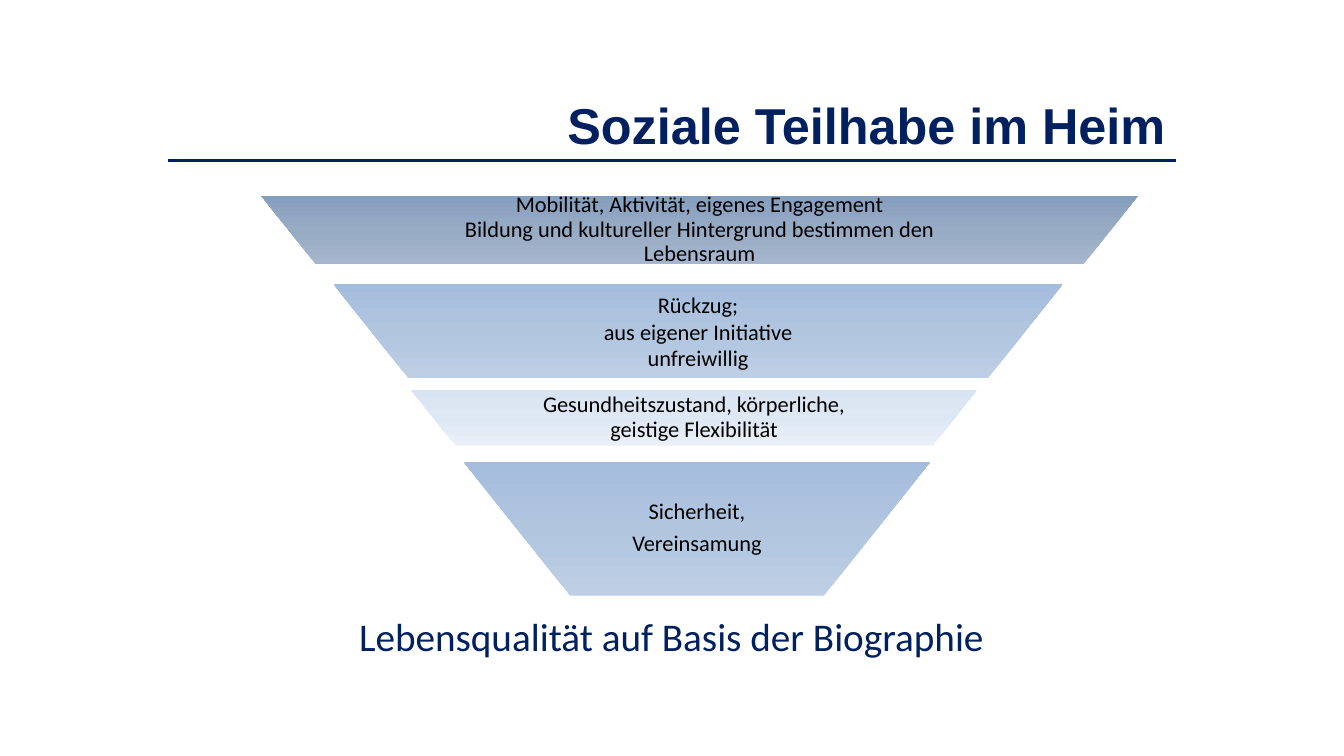
from copy import deepcopy

from pptx import Presentation
from pptx.dml.color import RGBColor
from pptx.enum.shapes import MSO_CONNECTOR, MSO_SHAPE
from pptx.enum.text import MSO_ANCHOR, MSO_AUTO_SIZE, PP_ALIGN
from pptx.oxml.ns import qn
from pptx.oxml.xmlchemy import OxmlElement
from pptx.util import Inches, Pt

NAVY = RGBColor(0x00, 0x20, 0x60)
BLACK = RGBColor(0x00, 0x00, 0x00)
STEEL = [RGBColor(0xA5, 0xB6, 0xCE), RGBColor(0x98, 0xAB, 0xC4), RGBColor(0x86, 0x9E, 0xBE)]
SKY = [RGBColor(0xBE, 0xCF, 0xE5), RGBColor(0xB1, 0xC5, 0xDF), RGBColor(0xA4, 0xBD, 0xDD)]
MIST = [RGBColor(0xEB, 0xF0, 0xF8), RGBColor(0xDE, 0xE7, 0xF4), RGBColor(0xD9, 0xE4, 0xF3)]

TRAPEZOID = MSO_SHAPE.TRAPEZOID
STRAIGHT = MSO_CONNECTOR.STRAIGHT
TOP, MIDDLE, BOTTOM = MSO_ANCHOR.TOP, MSO_ANCHOR.MIDDLE, MSO_ANCHOR.BOTTOM
CENTER, RIGHT = PP_ALIGN.CENTER, PP_ALIGN.RIGHT
NO_FIT = MSO_AUTO_SIZE.NONE

TITLE_ONLY = 5
LOOSE = (None, None)
TIGHT = (0.9, Pt(5.6))

# centre, top, width, height, text width (percent of the slide), colours, spacing, paragraphs
TIERS = [
    (52.05, 25.87, 65.25, 9.07, 42.38, STEEL, TIGHT,
     ["Mobilität, Aktivität, eigenes Engagement\n"
      "Bildung und kultureller Hintergrund bestimmen den Lebensraum"]),
    (51.94, 37.6, 54.23, 12.4, 35.25, SKY, LOOSE,
     ["Rückzug;", "aus eigener Initiative", "unfreiwillig"]),
    (51.64, 51.6, 42.08, 7.33, 27.38, MIST, TIGHT,
     ["Gesundheitszustand, körperliche, geistige Flexibilität"]),
    (51.86, 61.07, 34.73, 17.73, 34.73, SKY, TIGHT,
     ["Sicherheit,", "Vereinsamung"]),
]


class SlideBuilder:
    """Draws on one slide; all places and sizes are percent of the slide."""

    body_font = "Calibri"
    title_font = "Arial"
    slope = 0.794

    def __init__(self, deck):
        self.deck = deck
        self.page = deck.slides.add_slide(deck.slide_layouts[TITLE_ONLY])

    def across(self, percent):
        return round(self.deck.slide_width * percent / 100)

    def down(self, percent):
        return round(self.deck.slide_height * percent / 100)

    def area(self, left, top, width, height):
        return self.across(left), self.down(top), self.across(width), self.down(height)

    def add_text(self, frame, paragraphs, size, color, font,
                 align=CENTER, bold=False, spacing=LOOSE):
        """Fill a text frame; a newline inside a paragraph becomes a line break."""
        for index, text in enumerate(paragraphs):
            para = frame.add_paragraph() if index else frame.paragraphs[0]
            para.alignment = align
            para.line_spacing, para.space_after = spacing
            for number, line in enumerate(text.split("\n")):
                if number:
                    para.add_line_break()
                span = para.add_run()
                span.text = line
                span.font.name = font
                span.font.size = Pt(size)
                span.font.bold = bold
                span.font.color.rgb = color

    def title(self, text, area):
        box = self.page.shapes.title
        box.left, box.top, box.width, box.height = self.area(*area)
        frame = box.text_frame
        frame.auto_size = NO_FIT
        frame.vertical_anchor = BOTTOM
        self.add_text(frame, [text], 36, NAVY, self.title_font, RIGHT, True, (0.9, None))

    def rule(self, left, right, height):
        line = self.page.shapes.add_connector(
            STRAIGHT, self.across(left), self.down(height), self.across(right), self.down(height))
        line.line.color.rgb = NAVY
        line.line.width = Pt(2.25)
        line._element.spPr.append(OxmlElement("a:effectLst"))

    def text(self, paragraphs, area, size, color, anchor=TOP, inset=None, spacing=LOOSE):
        frame = self.page.shapes.add_textbox(*self.area(*area)).text_frame
        frame.word_wrap = True
        frame.vertical_anchor = anchor
        if inset is not None:
            frame.margin_left = frame.margin_right = inset
            frame.margin_top = frame.margin_bottom = inset
        self.add_text(frame, paragraphs, size, color, self.body_font, spacing=spacing)

    def trapezoid(self, area, colors):
        """Add a trapezoid standing on its short side, shaded from top to bottom."""
        shape = self.page.shapes.add_shape(TRAPEZOID, *self.area(*area))
        shape.rotation = 180
        shape.adjustments[0] = self.slope
        shape.shadow.inherit = False
        shape.line.fill.background()
        shape.fill.gradient()
        shape.fill.gradient_angle = 270
        stops = shape._element.spPr.find(qn("a:gradFill")).find(qn("a:gsLst"))
        stops.insert(1, deepcopy(stops[0]))
        for stop, position, color in zip(shape.fill.gradient_stops, (0, 0.5, 1), colors):
            stop.position = position
            stop.color.rgb = color

    def tier(self, centre, top, width, height, text_width, colors, spacing, paragraphs):
        self.trapezoid((centre - width / 2, top, width, height), colors)
        self.text(paragraphs, (centre - text_width / 2, top, text_width, height),
                  16, BLACK, MIDDLE, Inches(0.02), spacing)


def main():
    deck = Presentation()
    deck.slide_width, deck.slide_height = Inches(13.33), Inches(7.5)
    builder = SlideBuilder(deck)
    builder.rule(12.5, 87.5, 21.2)
    builder.title("Soziale Teilhabe im Heim", (12.5, 2.93, 75, 18.27))
    for tier in TIERS:
        builder.tier(*tier)
    builder.text(["Lebensqualität auf Basis der Biographie"], (20.7, 80.4, 58.5, 7.6), 28, NAVY)
    deck.save("out.pptx")


if __name__ == "__main__":
    main()
